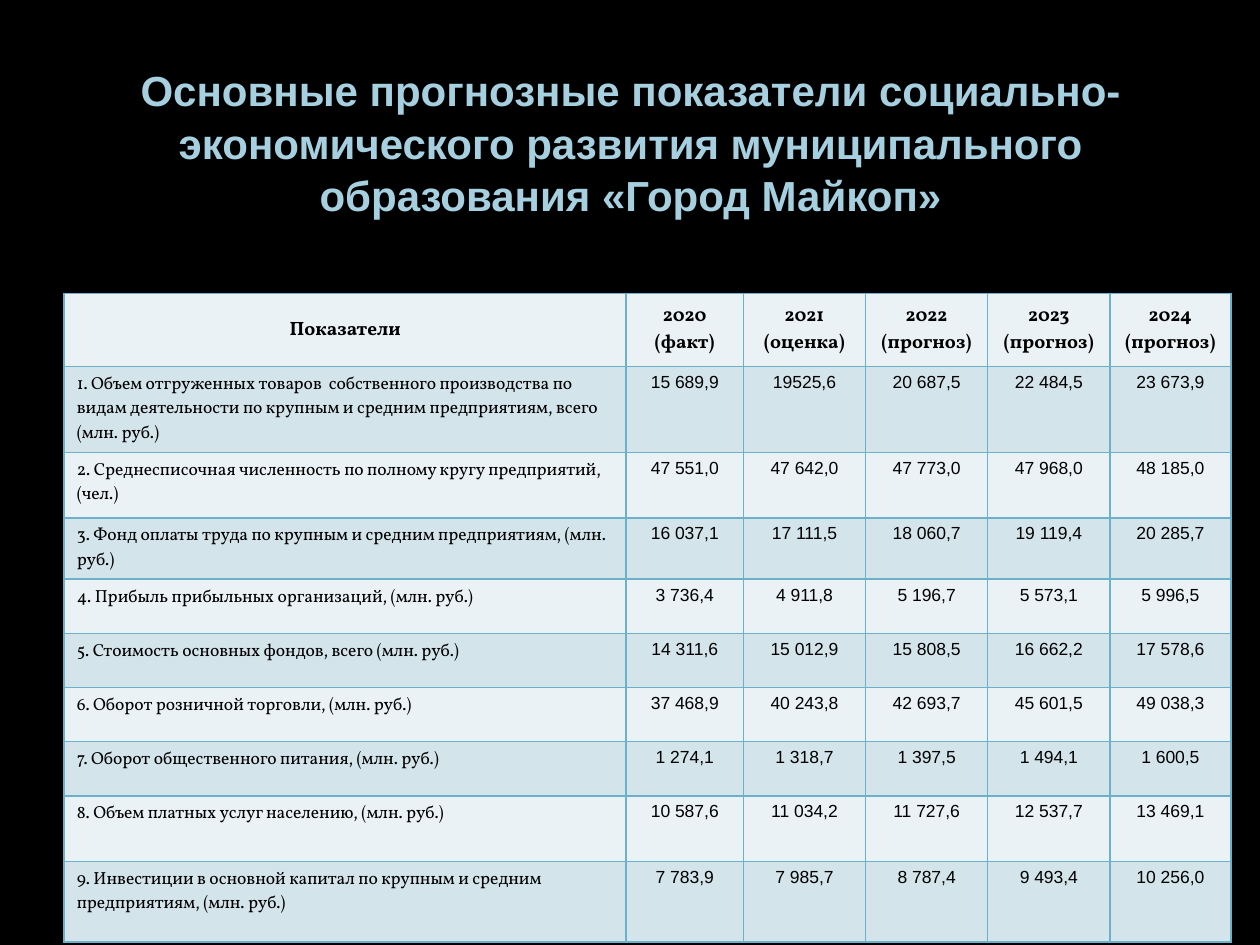
"""Slide with a table of forecast indicators for the city of Maykop."""
from lxml import etree
from pptx import Presentation
from pptx.dml.color import RGBColor
from pptx.enum.text import MSO_ANCHOR, MSO_AUTO_SIZE, PP_ALIGN
from pptx.oxml.ns import qn
from pptx.util import Inches, Pt

CENTER, LEFT = PP_ALIGN.CENTER, PP_ALIGN.LEFT
MIDDLE, TOP = MSO_ANCHOR.MIDDLE, MSO_ANCHOR.TOP
GROW = MSO_AUTO_SIZE.SHAPE_TO_FIT_TEXT
COLORS = {
    "background": "000000", "title": "A6D0DF", "outline": "295F71",
    "text": "000000", "border": "6BB1C9", "light": "EBF2F5", "dark": "D4E4EB",
}
COLUMN_WIDTHS = [4.46, 0.93, 0.97, 0.97, 0.97, 0.96]
ROW_HEIGHTS = [0.58, 0.68, 0.52, 0.48, 0.43, 0.43, 0.43, 0.43, 0.52, 0.64]
ROWS = [
    ["Показатели", "2020 (факт)", "2021 (оценка)", "2022 (прогноз)",
     "2023 (прогноз)", "2024\n(прогноз)"],
    ["1. Объем отгруженных товаров  собственного производства по видам "
     "деятельности по крупным и средним предприятиям, всего (млн. руб.)",
     "15 689,9", "19525,6", "20 687,5", "22 484,5", "23 673,9"],
    ["2. Среднесписочная численность по полному кругу предприятий, (чел.)",
     "47 551,0", "47 642,0", "47 773,0", "47 968,0", "48 185,0"],
    ["3. Фонд оплаты труда по крупным и средним предприятиям, (млн. руб.)",
     "16 037,1", "17 111,5", "18 060,7", "19 119,4", "20 285,7"],
    ["4. Прибыль прибыльных организаций, (млн. руб.)",
     "3 736,4", "4 911,8", "5 196,7", "5 573,1", "5 996,5"],
    ["5. Стоимость основных фондов, всего (млн. руб.)",
     "14 311,6", "15 012,9", "15 808,5", "16 662,2", "17 578,6"],
    ["6. Оборот розничной торговли, (млн. руб.)",
     "37 468,9", "40 243,8", "42 693,7", "45 601,5", "49 038,3"],
    ["7. Оборот общественного питания, (млн. руб.)",
     "1 274,1", "1 318,7", "1 397,5", "1 494,1", "1 600,5"],
    ["8. Объем платных услуг населению, (млн. руб.)",
     "10 587,6", "11 034,2", "11 727,6", "12 537,7", "13 469,1"],
    ["9. Инвестиции в основной капитал по крупным и средним предприятиям, "
     "(млн. руб.)",
     "7 783,9", "7 985,7", "8 787,4", "9 493,4", "10 256,0"],
]


def add_line(parent, tag, points, color, position):
    line = etree.Element(qn(tag), w=str(Pt(points)))
    fill = etree.SubElement(line, qn("a:solidFill"))
    etree.SubElement(fill, qn("a:srgbClr"), val=color)
    parent.insert(position, line)


def style_font(font, name, size, color, bold):
    font.name = name
    font.size = Pt(size)
    font.bold = bold
    font.color.rgb = RGBColor.from_string(color)


deck = Presentation()
deck.slide_width, deck.slide_height = Inches(10), Inches(7.5)
page = deck.slides.add_slide(deck.slide_layouts[6])
page.background.fill.solid()
page.background.fill.fore_color.rgb = RGBColor.from_string(COLORS["background"])

table = page.shapes.add_table(
    len(ROWS), len(COLUMN_WIDTHS), Inches(0.51), Inches(2.33),
    Inches(sum(COLUMN_WIDTHS)), Inches(sum(ROW_HEIGHTS))).table
for column, width in zip(table.columns, COLUMN_WIDTHS):
    column.width = Inches(width)
for row, height in zip(table.rows, ROW_HEIGHTS):
    row.height = Inches(height)

for row_index, texts in enumerate(ROWS):
    header = row_index == 0
    shade = COLORS["dark" if row_index % 2 else "light"]
    for column_index, text in enumerate(texts):
        label = column_index == 0
        cell = table.cell(row_index, column_index)
        cell.text = text
        cell.vertical_anchor = MIDDLE if header else TOP
        cell.fill.solid()
        cell.fill.fore_color.rgb = RGBColor.from_string(shade)
        for position, tag in enumerate(("a:lnL", "a:lnR", "a:lnT", "a:lnB")):
            add_line(cell.fill._xPr, tag, 1, COLORS["border"], position)
        for para in cell.text_frame.paragraphs:
            para.alignment = LEFT if label and not header else CENTER
            style_font(para.font, "Vollkorn" if header or label else "Arial",
                       11 if header else 10, COLORS["text"], header)

box = page.shapes.add_textbox(Inches(0.87), Inches(0.44), Inches(8.27), Inches(1.31))
frame = box.text_frame
frame.word_wrap = True
frame.auto_size = GROW
para = frame.paragraphs[0]
para.alignment = CENTER
para.line_spacing = 1.05
span = para.add_run()
span.text = ("Основные прогнозные показатели социально-экономического развития "
             "муниципального образования «Город Майкоп»")
style_font(span.font, "Arial", 24, COLORS["title"], True)
add_line(span.font._element, "a:ln", 1.5, COLORS["outline"], 0)

deck.save("out.pptx")
